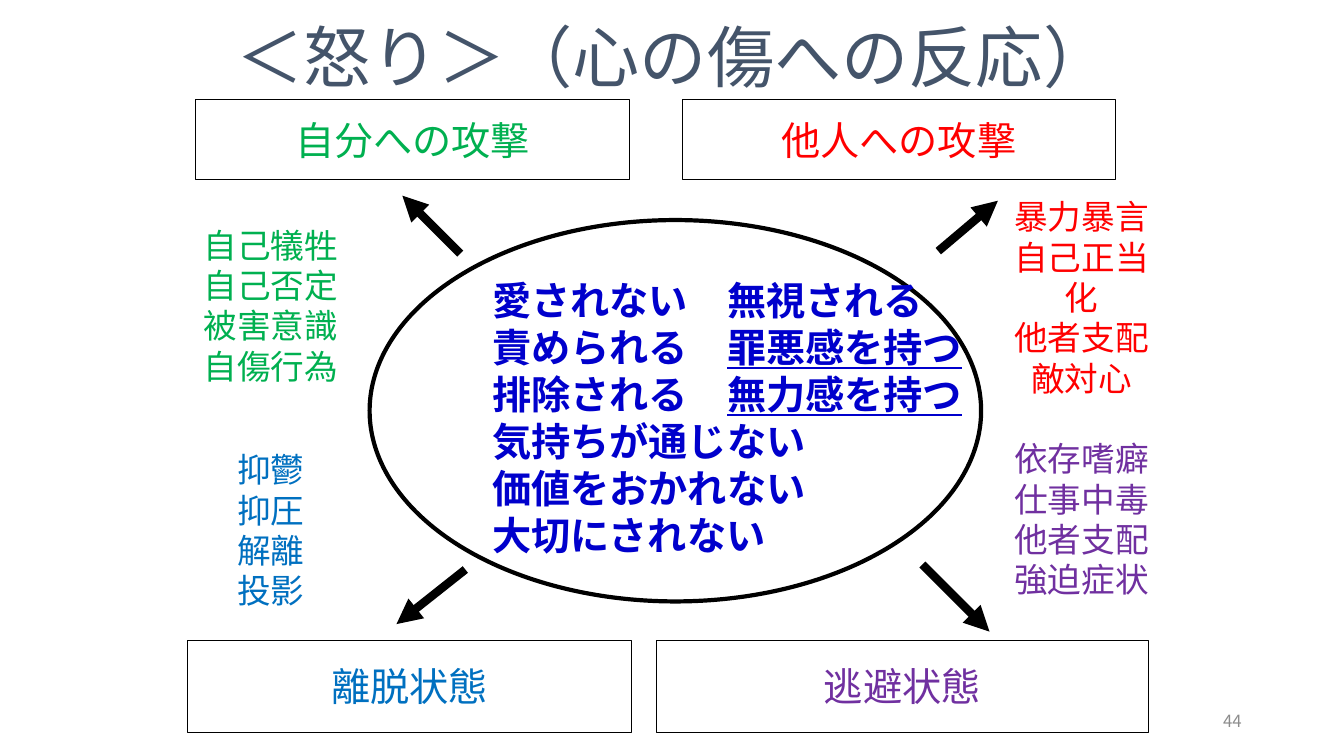
import pptx
import pptx.dml.color
import pptx.enum.shapes
import pptx.enum.text
import pptx.oxml
import pptx.oxml.ns
import pptx.util
from lxml import etree

SHAPE = pptx.enum.shapes.MSO_SHAPE
ALIGN = pptx.enum.text.PP_ALIGN
SANS = "Noto Sans CJK JP"
GREEN, RED, BLUE, PURPLE = "00B050", "FF0000", "0070C0", "7030A0"


def color(code):
    return pptx.dml.color.RGBColor.from_string(code)


class Page:
    cols, rows = 80, 45
    ink, paper = "000000", "FFFFFF"

    def __init__(self, deck):
        self.slide = deck.slides.add_slide(deck.slide_layouts[6])
        self.wide = deck.slide_width / self.cols
        self.high = deck.slide_height / self.rows

    def place(self, left, top, width, height):
        return (round(left * self.wide), round(top * self.high),
                round(width * self.wide), round(height * self.high))

    def outline(self, kind, area, weight, fill=None):
        shape = self.slide.shapes.add_shape(kind, *self.place(*area))
        shape.shadow.inherit = False
        if fill:
            shape.fill.solid()
            shape.fill.fore_color.rgb = color(fill)
        else:
            shape.fill.background()
        shape.line.color.rgb = color(self.ink)
        shape.line.width = pptx.util.Pt(weight)
        return shape

    def style(self, run, size, font, tint, bold):
        run.font.size = pptx.util.Pt(size)
        run.font.name = font
        run.font.bold = bold
        run.font.color.rgb = color(tint)
        east = etree.SubElement(run.font._element, pptx.oxml.ns.qn("a:ea"))
        east.set("typeface", SANS)

    def letter(self, shape, text, size, font, tint,
               align=ALIGN.CENTER, bold=False, wrap=False):
        frame = shape.text_frame
        frame.text = text
        frame.word_wrap = wrap
        frame.vertical_anchor = pptx.enum.text.MSO_ANCHOR.MIDDLE
        many = len(frame.paragraphs) > 1
        if many:
            frame.margin_top = pptx.util.Inches(0.09)
            frame.margin_bottom = pptx.util.Inches(0.01)
        for line in frame.paragraphs:
            line.alignment = align
            if many:
                line.line_spacing = pptx.util.Pt(size * 1.2)
            for run in line.runs:
                self.style(run, size, font, tint, bold)
        return frame

    def label(self, area, *text, **look):
        shape = self.slide.shapes.add_textbox(*self.place(*area))
        return self.letter(shape, *text, **look)

    def box(self, area, text, font, tint):
        shape = self.outline(SHAPE.RECTANGLE, area, 0.75)
        self.letter(shape, text, 28, font, tint)

    def arrow(self, start, end):
        points = self.place(*start, *end)
        line = self.slide.shapes.add_connector(
            pptx.enum.shapes.MSO_CONNECTOR.STRAIGHT, *points)
        line.line.color.rgb = color(self.ink)
        line.line.width = pptx.util.Pt(6)
        tip = etree.SubElement(line.line._get_or_add_ln(),
                               pptx.oxml.ns.qn("a:tailEnd"))
        tip.set("type", "triangle")
        etree.SubElement(line._element.spPr, pptx.oxml.ns.qn("a:effectLst"))

    def core(self):
        self.outline(SHAPE.OVAL, (22, 13.1, 36.4, 22.7), 3, self.paper)
        pairs = [("責められる　", "罪悪感を持つ"), ("排除される　", "無力感を持つ")]
        lines = ["愛されない　無視される", *(pair[0] for pair in pairs),
                 "気持ちが通じない", "価値をおかれない", "大切にされない"]
        look = 28, "Calibri", "0000CC"
        frame = self.label((28.7, 14, 29.4, 21.2), "\n".join(lines), *look,
                           align=ALIGN.LEFT, bold=True, wrap=True)
        for line, pair in zip(frame.paragraphs[1:], pairs):
            run = line.add_run()
            run.text = pair[1]
            self.style(run, *look, True)
            run.font.underline = True


def main():
    deck = pptx.Presentation()
    deck.slide_width = pptx.util.Inches(13.33)
    deck.slide_height = pptx.util.Inches(7.5)
    page = Page(deck)
    page.core()

    boxes = [
        ((11.65, 5.95, 25.8, 4.75), "自分への攻撃", "Arial", GREEN),
        ((40.6, 5.95, 25.8, 4.75), "他人への攻撃", "Arial", RED),
        ((11.15, 38.1, 26.45, 5.5), "離脱状態", "Times New Roman", BLUE),
        ((39.05, 38.1, 29.3, 5.5), "逃避状態", "Arial", PURPLE),
    ]
    for box in boxes:
        page.box(*box)

    arrows = [
        ((27.4, 15.1), (23.95, 11.65)),
        ((55.85, 14.95), (59.4, 11.95)),
        ((27.7, 33.9), (23.6, 37.15)),
        ((54.9, 33.6), (58.9, 37.6)),
    ]
    for start, end in arrows:
        page.arrow(start, end)

    lists = [
        (11.15, 12.1, 11.65, "自己犠牲 自己否定 被害意識 自傷行為", GREEN),
        (59.4, 11.15, 12.6, "暴力暴言 自己正当化 他者支配 敵対心", RED),
        (11.15, 25, 12.6, "抑鬱 抑圧 解離 投影", BLUE),
        (59.4, 24.35, 12.6, "依存嗜癖 仕事中毒 他者支配 強迫症状", PURPLE),
    ]
    for left, top, height, words, tint in lists:
        page.label((left, top, 9.95, height), "\n".join(words.split()),
                   24, "Arial", tint)

    page.label((11.6, 0.95, 57, 4.75), "＜怒り＞（心の傷への反応）",
               48, SANS, "44546A", wrap=True)
    page.label((56.5, 41.7, 18, 2.4), "44", 12, SANS, "8C8C8C",
               align=ALIGN.RIGHT, wrap=True)
    deck.save("out.pptx")


if __name__ == "__main__":
    main()
